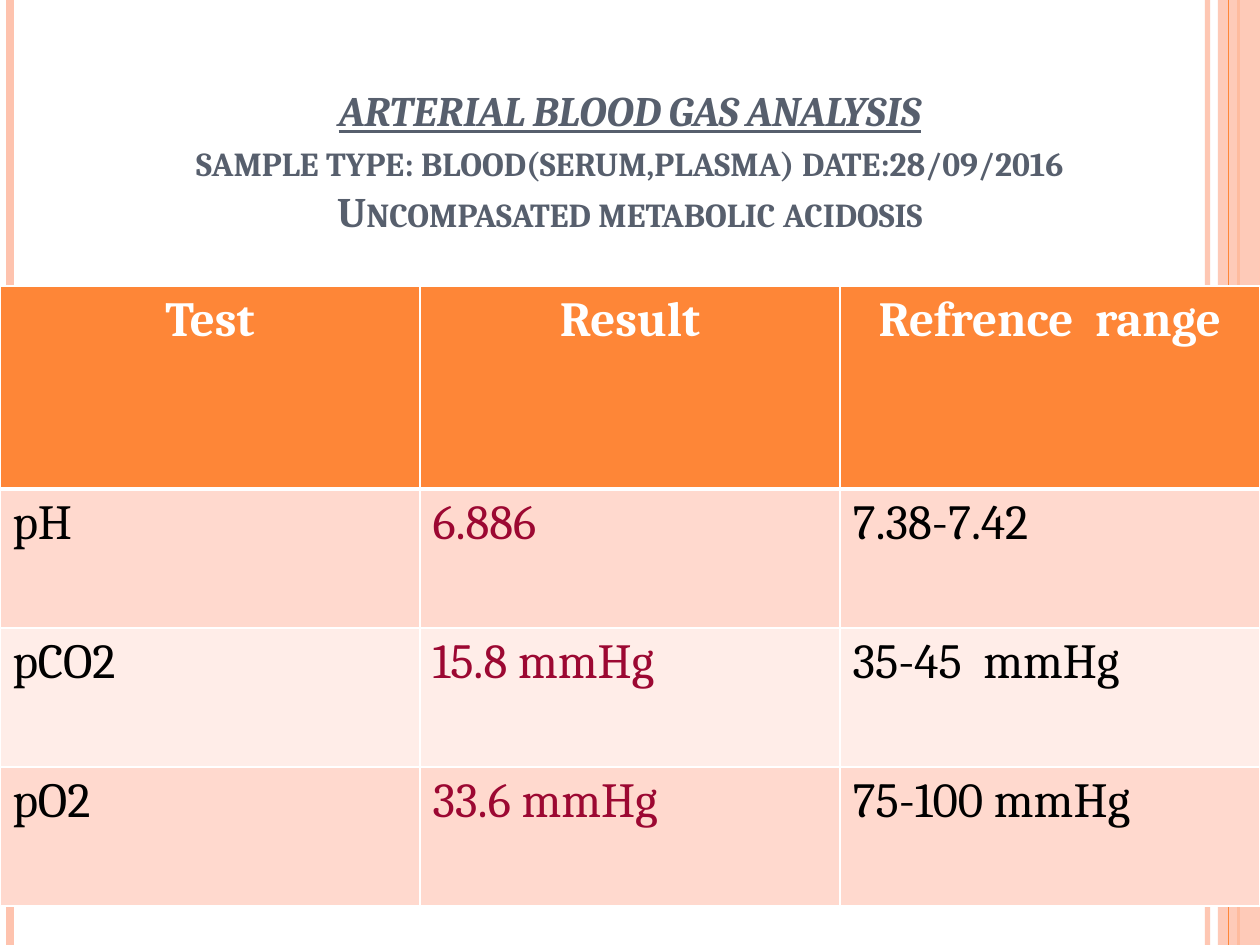
"""Build the arterial blood gas analysis slide."""
from dataclasses import dataclass
from typing import Any

import pptx
import pptx.dml.color
import pptx.enum.shapes
import pptx.enum.text
import pptx.oxml
import pptx.oxml.ns
import pptx.util
from lxml import etree

Pt = pptx.util.Pt
FONT = "Cambria"
WIDE, HIGH = 720, 540
HEX = {
    "white": "FFFFFF",
    "black": "000000",
    "orange": "FE8637",
    "peach": "FEC3AE",
    "dark": "FFD9CE",
    "light": "FFEDE8",
    "slate": "575F6D",
    "wine": "9C0832",
}


@dataclass
class Stripe:
    x: float
    width: float
    color: str
    alpha: int = 100


LEFT = [
    Stripe(690, 3, "peach", 93),
    Stripe(5.9, 4.5, "peach"),
    Stripe(707.8, 1.5, "orange"),
]
BAND = Stripe(696, 24, "peach", 87)
EDGE = Stripe(702, 0.75, "orange")

TITLE = [
    "ARTERIAL BLOOD GAS ANALYSIS",
    "sample type: blood(serum,plasma) date:28/09/2016",
    "Uncompasated metabolic acidosis",
]
ROWS = [
    ("Test", "Result", "Refrence  range"),
    ("pH", "6.886", "7.38-7.42"),
    ("pCO2", "15.8 mmHg", "35-45  mmHg"),
    ("pO2", "33.6 mmHg", "75-100 mmHg"),
]


def shade(name: str) -> Any:
    """Return the named colour."""
    return pptx.dml.color.RGBColor.from_string(HEX[name])


def child(node: Any, tag: str, **attrs: str) -> Any:
    """Append a drawing element to a node."""
    part = etree.SubElement(node, pptx.oxml.ns.qn(tag))
    for key, value in attrs.items():
        part.set(key, value)
    return part


def fade(shape: Any, alpha: int) -> None:
    """Set the opacity of the only colour in a shape."""
    if alpha < 100:
        tone = next(shape._element.spPr.iter(pptx.oxml.ns.qn("a:srgbClr")))
        child(tone, "a:alpha", val=str(alpha * 1000))


def rule(slide: Any, stripe: Stripe) -> None:
    """Draw a full-height vertical line."""
    line = slide.shapes.add_connector(
        pptx.enum.shapes.MSO_CONNECTOR.STRAIGHT,
        Pt(stripe.x), Pt(0), Pt(stripe.x), Pt(HIGH),
    )
    line.line.color.rgb = shade(stripe.color)
    line.line.width = Pt(stripe.width)
    fade(line, stripe.alpha)
    child(line._element.spPr, "a:effectLst")


def band(slide: Any, stripe: Stripe) -> None:
    """Draw a full-height filled band."""
    box = slide.shapes.add_shape(
        pptx.enum.shapes.MSO_SHAPE.RECTANGLE,
        Pt(stripe.x), Pt(0), Pt(stripe.width), Pt(HIGH),
    )
    box.shadow.inherit = False
    box.fill.solid()
    box.fill.fore_color.rgb = shade(stripe.color)
    fade(box, stripe.alpha)
    box.line.fill.background()


def style(run: Any, size: float, color: str, bold: bool) -> None:
    """Set the font of a run."""
    run.font.name = FONT
    run.font.size = Pt(size)
    run.font.bold = bold
    run.font.color.rgb = shade(color)


def title(slide: Any) -> None:
    """Write the small-caps title lines."""
    box = slide.shapes.add_textbox(Pt(0), Pt(16.5), Pt(WIDE), Pt(157.7))
    frame = box.text_frame
    frame.word_wrap = True
    frame.vertical_anchor = pptx.enum.text.MSO_ANCHOR.BOTTOM
    frame.margin_bottom = Pt(39.6)
    para = frame.paragraphs[0]
    para.text = "\v".join(TITLE)
    para.alignment = pptx.enum.text.PP_ALIGN.CENTER
    for i, run in enumerate(para.runs):
        style(run, 24, "slate", True)
        run.font.italic = run.font.underline = i == 0
        run.font._element.set("cap", "small")


def border(cell: Any, widths: dict[str, float]) -> None:
    """Give a cell white borders of the given widths."""
    props = cell._tc.get_or_add_tcPr()
    for side, width in widths.items():
        line = child(props, f"a:ln{side}", w=str(int(Pt(width))))
        fill = child(line, "a:solidFill")
        child(fill, "a:srgbClr", val=HEX["white"])


def paint(cell: Any, text: str, row: int, col: int) -> None:
    """Fill in one table cell."""
    head = row == 0
    top, low = (3 if row == 1 else 1), (3 if head else 1)
    border(cell, {"L": 1, "R": 1, "T": top, "B": low})
    cell.fill.solid()
    back = "orange" if head else "dark" if row % 2 else "light"
    cell.fill.fore_color.rgb = shade(back)
    cell.text_frame.text = text
    para = cell.text_frame.paragraphs[0]
    if head:
        para.alignment = pptx.enum.text.PP_ALIGN.CENTER
    ink = "white" if head else "wine" if col == 1 else "black"
    style(para.runs[0], 28, ink, head)


def results(slide: Any) -> None:
    """Draw the table of test results."""
    first, rest = 116, 79.4
    total = first + rest * (len(ROWS) - 1)
    table = slide.shapes.add_table(
        len(ROWS), len(ROWS[0]), Pt(0), Pt(163.5), Pt(WIDE), Pt(total)
    ).table
    for r, texts in enumerate(ROWS):
        table.rows[r].height = Pt(rest if r else first)
        for c, text in enumerate(texts):
            paint(table.cell(r, c), text, r, c)


def main() -> None:
    """Build and save the slide."""
    deck = pptx.Presentation()
    deck.slide_width, deck.slide_height = Pt(WIDE), Pt(HIGH)
    slide = deck.slides.add_slide(deck.slide_layouts[6])
    for stripe in LEFT:
        rule(slide, stripe)
    band(slide, BAND)
    rule(slide, EDGE)
    title(slide)
    results(slide)
    deck.save("out.pptx")


if __name__ == "__main__":
    main()
